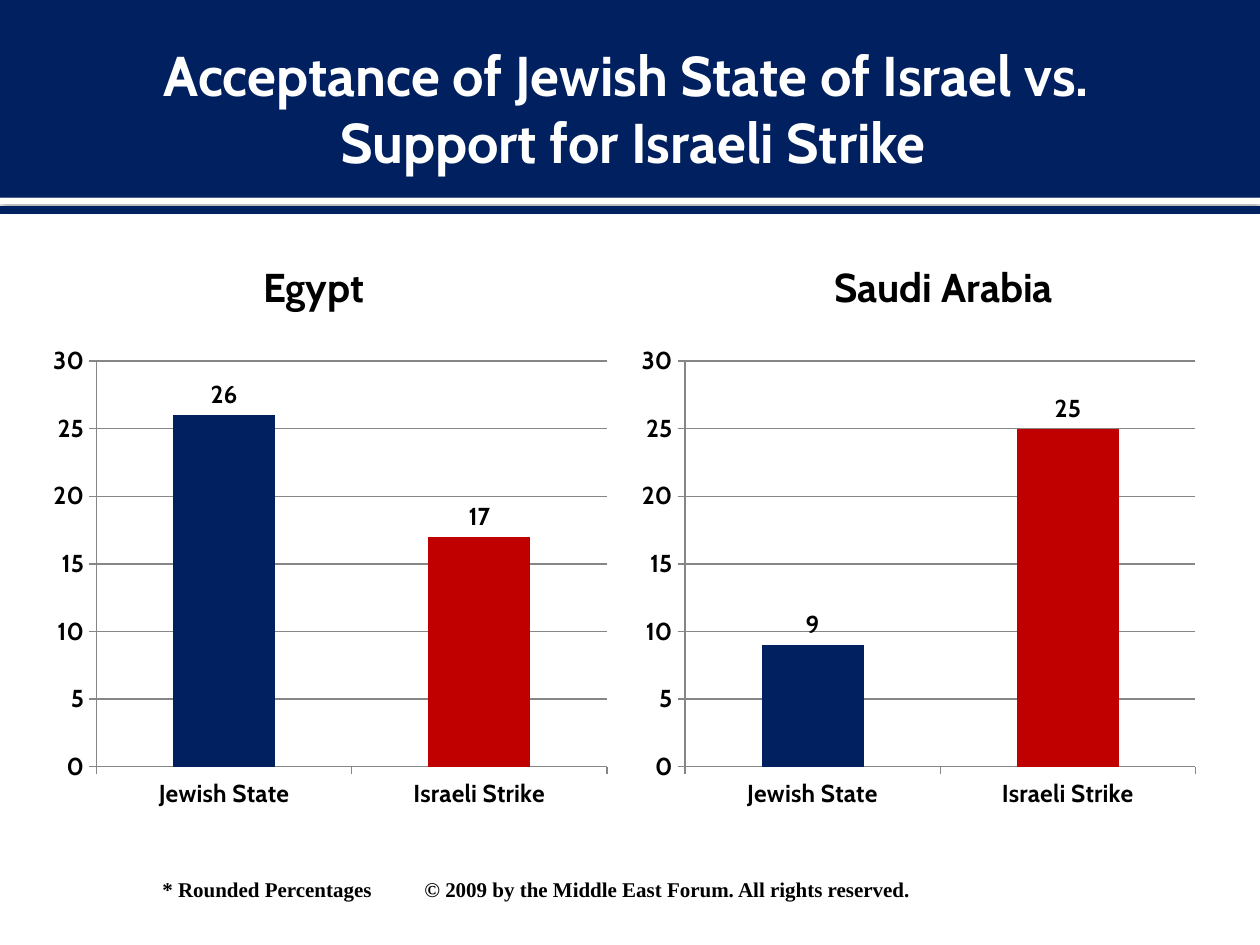
from lxml import etree
from pptx import Presentation
from pptx import util as u
from pptx.chart.data import CategoryChartData
from pptx.dml.color import RGBColor
from pptx.enum import chart as ch, shapes, text
from pptx.oxml import parse_xml
from pptx.oxml.ns import nsdecls, qn
from pptx.util import Inches

COLORS = {"navy": "002060", "red": "C00000", "white": "FFFFFF",
          "black": "000000", "grid": "868686"}
FONT = "Cabin"
CATEGORIES = ["Jewish State", "Israeli Strike"]
# Country, heading left, chart left, values
PANELS = [("Egypt", 0.25, 0.33, (26, 17)),
          ("Saudi Arabia", 5.25, 5, (9, 25))]


def rgb(name):
    return RGBColor.from_string(COLORS[name])


def style_font(font, size, color="black", name=FONT):
    font.size, font.bold, font.name = u.Pt(size), True, name
    font.color.rgb = rgb(color)


def add_box(s, box, lines, size, color, insets):
    """Centred text box with one line break between lines."""
    tf = s.shapes.add_textbox(*map(Inches, box)).text_frame
    tf.word_wrap = True
    tf.vertical_anchor = text.MSO_ANCHOR.MIDDLE
    (tf.margin_left, tf.margin_top,
     tf.margin_right, tf.margin_bottom) = map(Inches, insets)
    p = tf.paragraphs[0]
    p.alignment = text.PP_ALIGN.CENTER
    for i, line in enumerate(lines):
        if i:
            p.add_line_break()
        r = p.add_run()
        r.text = line
        style_font(r.font, size, color)


def add_bar(s, box, color):
    sp = s.shapes.add_shape(shapes.MSO_SHAPE.RECTANGLE, *map(Inches, box))
    sp.shadow.inherit = False
    sp.fill.solid()
    sp.fill.fore_color.rgb = rgb(color)
    sp.line.fill.background()
    return sp


def add_header(s, left, top, width, height):
    stripe = add_bar(s, (left, top + height, width, 0.05), "white")
    effects = stripe._element.spPr.find(qn("a:effectLst"))
    effects.append(parse_xml(
        f'<a:outerShdw {nsdecls("a")} blurRad="{u.Pt(5)}" dist="{u.Pt(0.8)}" '
        f'dir="5400000" rotWithShape="0"><a:srgbClr val="{COLORS["black"]}">'
        '<a:alpha val="60000"/></a:srgbClr></a:outerShdw>'))
    add_bar(s, (left, top, width, height), "navy")
    y = Inches(top + height + 0.1)
    rule = s.shapes.add_connector(shapes.MSO_CONNECTOR.STRAIGHT,
                                  Inches(left), y, Inches(left + width), y)
    rule.line.color.rgb = rgb("navy")
    rule.line.width = u.Pt(4.5)
    etree.SubElement(rule._element.spPr, qn("a:effectLst"))
    add_box(s, (left, top + 0.17, width, 1.37),
            ["Acceptance of Jewish State of Israel vs. ",
             "Support for Israeli Strike"],
            32, "white", (0.1, 0.05, 0.05, 0.05))


def add_bar_chart(s, left, top, width, height, values):
    data = CategoryChartData()
    data.categories = CATEGORIES
    data.add_series("Series 1", values)
    chart = s.shapes.add_chart(ch.XL_CHART_TYPE.COLUMN_CLUSTERED,
                               *map(Inches, (left, top, width, height)),
                               data).chart
    chart.has_legend = chart.has_title = False
    style_font(chart.font, 12)
    for axis in (chart.category_axis, chart.value_axis):
        axis.major_tick_mark = ch.XL_TICK_MARK.OUTSIDE
        axis.minor_tick_mark = ch.XL_TICK_MARK.NONE
        axis.format.line.color.rgb = rgb("grid")
        axis.format.line.width = u.Pt(0.75)
        style_font(axis.tick_labels.font, 14)
    axis = chart.value_axis
    axis.minimum_scale, axis.maximum_scale, axis.major_unit = 0, 30, 5
    axis.has_major_gridlines = True
    axis.major_gridlines.format.line.color.rgb = rgb("grid")
    axis.major_gridlines.format.line.width = u.Pt(0.75)

    plot = chart.plots[0]
    plot.gap_width = 150
    plot.vary_by_categories = False
    series = plot.series[0]
    for fill, color in ((series.format.fill, "navy"),
                        (series.points[1].format.fill, "red")):
        fill.solid()
        fill.fore_color.rgb = rgb(color)
    labels = series.data_labels
    labels.show_value = True
    labels.position = ch.XL_LABEL_POSITION.OUTSIDE_END
    style_font(labels.font, 14)


def add_footer(s, left, top, width, height):
    tf = s.shapes.add_textbox(
        *map(Inches, (left, top, width, height))).text_frame
    tf.word_wrap = False
    p = tf.paragraphs[0]
    tabs = etree.SubElement(p._p.get_or_add_pPr(), qn("a:tabLst"))
    etree.SubElement(tabs, qn("a:tab"), pos=str(Inches(2.08)), algn="l")
    for words in ("* Rounded Percentages\t",
                  "© 2009 by the Middle East Forum. All rights reserved."):
        r = p.add_run()
        r.text = words
        style_font(r.font, 12, name="Times New Roman")


def main():
    prs = Presentation()
    prs.slide_width, prs.slide_height = Inches(10), Inches(7.5)
    s = prs.slides.add_slide(prs.slide_layouts[6])
    add_header(s, 0, 0, 10, 1.57)
    for country, heading_left, chart_left, values in PANELS:
        add_box(s, (heading_left, 1.86, 4.42, 0.78), [country], 23, "black",
                (0.16, 0.1, 0.1, 0.05))
        add_bar_chart(s, chart_left, 2.67, 4.58, 3.83, values)
    add_footer(s, 1.19, 6.91, 6.2, 0.61)
    prs.save("out.pptx")


if __name__ == "__main__":
    main()
